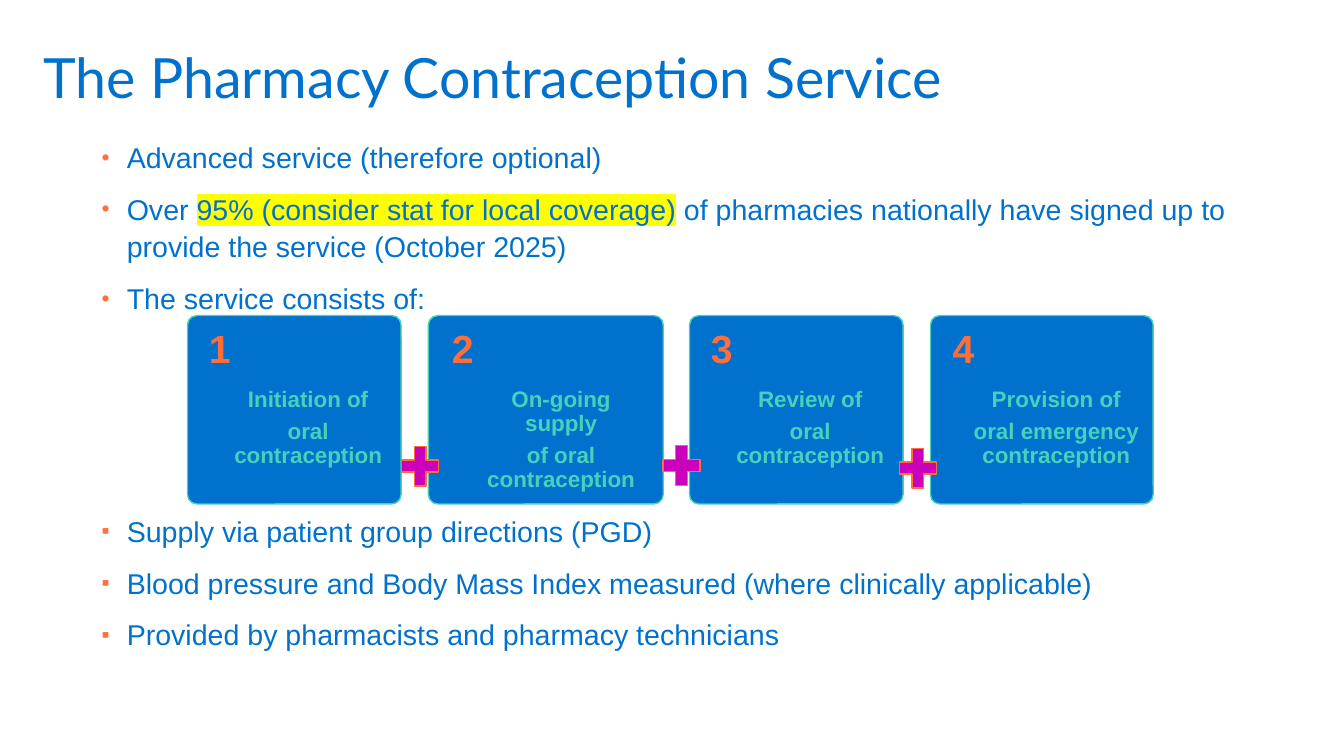
import pptx
import pptx.dml.color
import pptx.enum.shapes
import pptx.enum.text
import pptx.oxml
import pptx.oxml.ns
import pptx.util
from pptx.util import Pt

BLUE, ORANGE, TEAL, MAGENTA, YELLOW = "0072CE", "FF6D3A", "48D1BA", "CB00BA", "FFFF00"
BULLET_COLOUR = "FF6E3B"
SHAPES = pptx.enum.shapes.MSO_SHAPE
ALIGN = pptx.enum.text.PP_ALIGN
ANCHOR = pptx.enum.text.MSO_ANCHOR

TITLE = "The Pharmacy Contraception Service"
OVERVIEW = [
    ["Advanced service (therefore optional)"],
    ["Over ", ("95% (consider stat for local coverage)", YELLOW),
     " of pharmacies nationally have signed up to provide the service (October 2025)"],
    ["The service consists of:"],
]
DELIVERY = [
    ["Supply via patient group directions (PGD)"],
    ["Blood pressure and Body Mass Index measured (where clinically applicable)"],
    ["Provided by pharmacists and pharmacy technicians"],
]
# Left edge, width, caption lines
STAGES = [
    (133.9, 152.6, ["Initiation of", "oral contraception"]),
    (306, 167.8, ["On-going supply", "of oral contraception"]),
    (492.5, 152.6, ["Review of", "oral contraception"]),
    (664.6, 159.1, ["Provision of", "oral emergency contraception"]),
]
STAGE_TOP, STAGE_HEIGHT = 225.4, 134.6
PLUS_CENTRES = [(300.2, 333), (486.7, 332.6), (655.6, 334.4)]
PLUS_WIDTH, PLUS_HEIGHT = 36, 38.5


def colour(hex_code):
    return pptx.dml.color.RGBColor.from_string(hex_code)


def drawing_xml(tag, **attributes):
    element = pptx.oxml.parse_xml(f"<a:{tag} {pptx.oxml.ns.nsdecls('a')}/>")
    for name, value in attributes.items():
        element.set(name, value)
    return element


def add_bullet(paragraph, character):
    properties = paragraph._p.get_or_add_pPr()
    properties.set("marL", str(Pt(18)))
    properties.set("indent", str(-Pt(18)))
    tint = drawing_xml("buClr")
    tint.append(drawing_xml("srgbClr", val=BULLET_COLOUR))
    for part in (tint, drawing_xml("buSzPct", val="80000"),
                 drawing_xml("buFont", typeface="Arial"),
                 drawing_xml("buChar", char=character)):
        properties.append(part)


def write(frame, paragraphs, size, text_colour, font="Arial", bold=False, align=ALIGN.LEFT,
          spacing=1.0, before=0, after=0, bullet=None, inset=(0, 0), anchor=ANCHOR.TOP):
    """Fill a frame; each paragraph lists plain strings or (text, highlight) pairs."""
    frame.word_wrap = True
    frame.auto_size = pptx.enum.text.MSO_AUTO_SIZE.NONE
    frame.vertical_anchor = anchor
    frame.margin_left = frame.margin_right = Pt(inset[0])
    frame.margin_top = frame.margin_bottom = Pt(inset[1])
    for index, pieces in enumerate(paragraphs):
        paragraph = frame.add_paragraph() if index else frame.paragraphs[0]
        if bullet:
            add_bullet(paragraph, bullet)
        paragraph.alignment = align
        paragraph.line_spacing = spacing
        paragraph.space_before = Pt(before if index else 0)
        paragraph.space_after = Pt(after)
        for piece in pieces:
            words, highlight = (piece, None) if isinstance(piece, str) else piece
            run = paragraph.add_run()
            run.text = words
            run.font.size, run.font.bold, run.font.name = Pt(size), bold, font
            run.font.color.rgb = colour(text_colour)
            if highlight:
                marker = drawing_xml("highlight")
                marker.append(drawing_xml("srgbClr", val=highlight))
                run.font._element.find(pptx.oxml.ns.qn("a:solidFill")).addnext(marker)


def add_text(slide, left, top, width, height, paragraphs, **text_format):
    box = slide.shapes.add_textbox(Pt(left), Pt(top), Pt(width), Pt(height))
    write(box.text_frame, paragraphs, **text_format)


def add_filled(slide, preset, left, top, width, height, fill, line):
    shape = slide.shapes.add_shape(preset, Pt(left), Pt(top), Pt(width), Pt(height))
    shape.shadow.inherit = False
    shape.fill.solid()
    shape.fill.fore_color.rgb = colour(fill)
    shape.line.color.rgb = colour(line)
    shape.line.width = Pt(1)
    return shape


def set_title(slide, left, top, width, height):
    title = slide.shapes.title
    title.left, title.top, title.width, title.height = map(Pt, (left, top, width, height))
    write(title.text_frame, [[TITLE]], size=39.6, text_colour=BLUE, font="Lato",
          spacing=1.1, inset=(7.2, 3.6), anchor=ANCHOR.MIDDLE)


def add_bullet_list(slide, left, top, width, height, items, bullet):
    add_text(slide, left, top, width, height, items, size=20.4, text_colour=BLUE,
             spacing=1.1, before=10, bullet=bullet, inset=(7.2, 3.6))


def add_stage(slide, left, top, width, height, number, caption):
    card = add_filled(slide, SHAPES.ROUNDED_RECTANGLE, left, top, width, height, BLUE, TEAL)
    card.adjustments[0] = 0.05
    add_text(slide, left + 0.1 * width, top + 6.4, 0.2 * width, 34, [[str(number)]],
             size=28, text_colour=ORANGE, bold=True)
    add_text(slide, left + 0.19 * width, top + 52, 0.75 * width, height - 52,
             [[line] for line in caption], size=16, text_colour=TEAL, bold=True,
             align=ALIGN.CENTER, spacing=0.9, after=5.5)


def add_stages(slide, top, height):
    for number, (left, width, caption) in enumerate(STAGES, start=1):
        add_stage(slide, left, top, width, height, number, caption)
    for x, y in PLUS_CENTRES:
        add_filled(slide, SHAPES.MATH_PLUS, x - PLUS_WIDTH / 2, y - PLUS_HEIGHT / 2,
                   PLUS_WIDTH, PLUS_HEIGHT, MAGENTA, ORANGE)


def main():
    deck = pptx.Presentation()
    deck.slide_width, deck.slide_height = Pt(960), Pt(540)
    slide = deck.slides.add_slide(deck.slide_layouts[5])
    set_title(slide, 23.8, 0, 802.8, 104.4)
    add_bullet_list(slide, 65.5, 94, 853.9, 131, OVERVIEW, "•")
    add_stages(slide, STAGE_TOP, STAGE_HEIGHT)
    add_bullet_list(slide, 65.5, 361, 853.9, 116, DELIVERY, "▪")
    deck.save("out.pptx")


if __name__ == "__main__":
    main()
